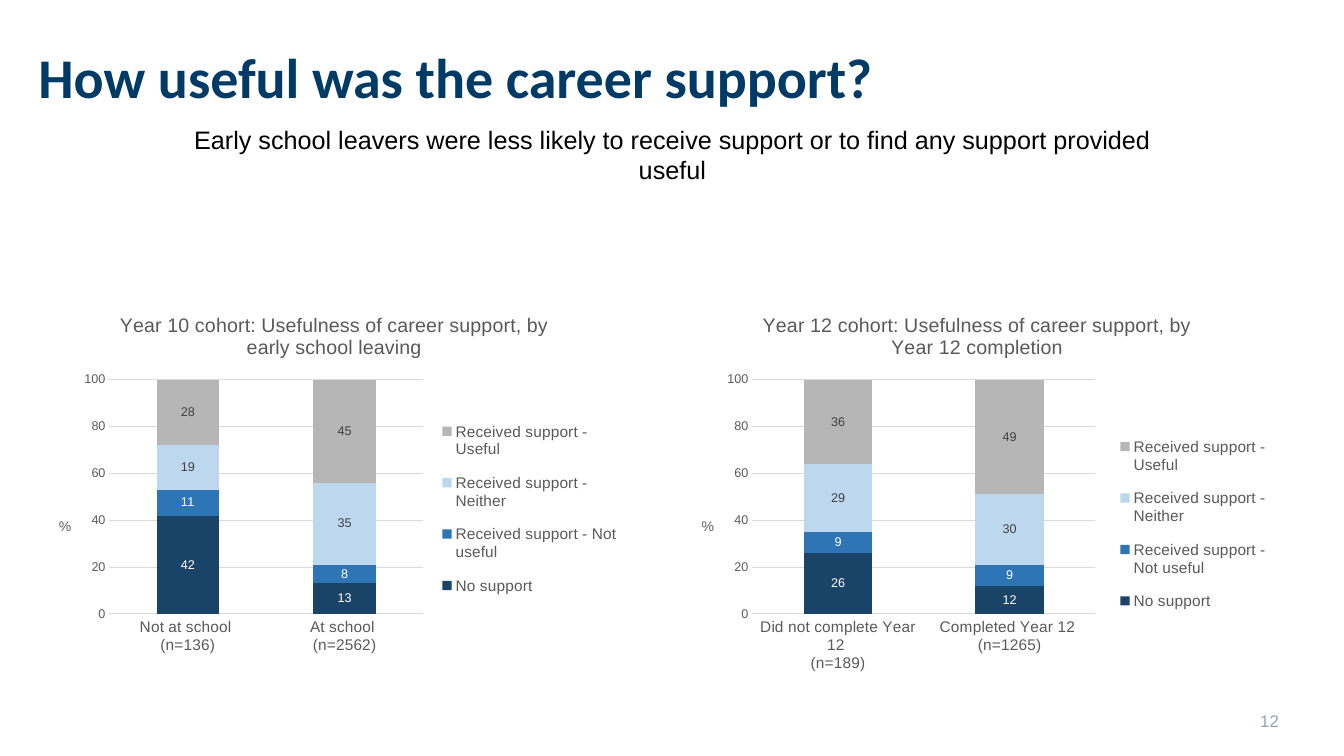
import dataclasses

import lxml.etree
import pptx
import pptx.chart.data
import pptx.dml.color
import pptx.enum.chart
import pptx.enum.text
import pptx.oxml.ns
import pptx.util

Cm = pptx.util.Cm
Align = pptx.enum.text.PP_ALIGN
Anchor = pptx.enum.text.MSO_ANCHOR


@dataclasses.dataclass(frozen=True)
class Theme:
    """Colours, fonts and type sizes of the slide."""
    heading_font: str = "Calibri"
    body_font: str = "Arial"
    navy: str = "003A66"
    black: str = "000000"
    grey: str = "595959"
    page_number: str = "8FA4BA"
    grid: str = "D9D9D9"
    light_label: str = "FFFFFF"
    dark_label: str = "404040"
    support: tuple = ("1A4368", "2E75B6", "BDD7EE", "B6B6B6")
    heading_size: int = 40
    subtitle_size: int = 18
    chart_title_size: int = 14
    page_size: int = 12
    legend_size: int = 11
    chart_size: int = 10
    label_size: int = 9


THEME = Theme()
LEVELS = ("No support", "Received support - Not useful",
          "Received support - Neither", "Received support - Useful")


def format_font(font, size, color=THEME.grey, name=THEME.body_font, bold=False):
    """Set the size, colour, face and weight of a font."""
    font.size = pptx.util.Pt(size)
    font.name = name
    font.bold = bold
    font.color.rgb = pptx.dml.color.RGBColor.from_string(color)


def write_text(frame, text, align=None, **font_format):
    """Write one formatted paragraph into a text frame."""
    paragraph = frame.paragraphs[0]
    paragraph.alignment = align
    run = paragraph.add_run()
    run.text = text
    format_font(run.font, **font_format)


def place(element, index, inner=False, **fractions):
    """Give a chart part a manual layout in fractions of the chart."""
    for old in element.findall(pptx.oxml.ns.qn("c:layout")):
        element.remove(old)
    layout = lxml.etree.Element(pptx.oxml.ns.qn("c:layout"))
    manual = lxml.etree.SubElement(layout, pptx.oxml.ns.qn("c:manualLayout"))
    settings = {"layoutTarget": "inner"} if inner else {}
    settings.update(xMode="edge", yMode="edge", **fractions)
    for tag, value in settings.items():
        lxml.etree.SubElement(manual, pptx.oxml.ns.qn(f"c:{tag}")).set("val", str(value))
    element.insert(index, layout)


class SlideBuilder:
    """Adds styled elements to the current slide."""

    def __init__(self, slide, theme):
        self.slide = slide
        self.theme = theme

    def text(self, box, text, inset=0, anchor=Anchor.TOP, **text_format):
        """Add a wrapped text box."""
        frame = self.slide.shapes.add_textbox(*map(Cm, box)).text_frame
        frame.word_wrap = True
        frame.vertical_anchor = anchor
        frame.margin_left = frame.margin_right = Cm(inset)
        frame.margin_top = frame.margin_bottom = Cm(inset / 2)
        write_text(frame, text, **text_format)

    def line(self, line):
        """Style a chart line as a thin grid line."""
        line.color.rgb = pptx.dml.color.RGBColor.from_string(self.theme.grid)
        line.width = pptx.util.Pt(0.75)

    def chart(self, left, title, categories, values, plot_width, legend):
        """Add a stacked column chart of career support."""
        theme = self.theme
        data = pptx.chart.data.CategoryChartData(number_format="0")
        data.categories = categories
        for level, shares in zip(LEVELS, values):
            data.add_series(level, shares)
        chart = self.slide.shapes.add_chart(
            pptx.enum.chart.XL_CHART_TYPE.COLUMN_STACKED,
            Cm(left), Cm(7.44), Cm(14.91), Cm(9.68), data).chart
        format_font(chart.font, theme.chart_size, theme.black)
        chart.has_title = True
        write_text(chart.chart_title.text_frame, title, size=theme.chart_title_size)
        chart.chart_title.include_in_layout = False
        self.columns(chart.plots[0])
        self.axes(chart)
        chart.has_legend = True
        chart.legend.position = pptx.enum.chart.XL_LEGEND_POSITION.RIGHT
        chart.legend.include_in_layout = False
        format_font(chart.legend.font, theme.legend_size)
        place(chart.element.xpath("c:chart/c:plotArea")[0], 0, inner=True,
              x=0.12, y=0.22, w=plot_width, h=0.61)
        place(chart.element.xpath("c:chart/c:legend")[0], 1, **legend)

    def columns(self, plot):
        """Colour and label the stacked columns."""
        theme = self.theme
        plot.gap_width = 150
        plot.overlap = 100
        plot.vary_by_categories = False
        label_colors = [theme.light_label] * 2 + [theme.dark_label] * 2
        for series, color, label_color in zip(plot.series, theme.support, label_colors):
            series.format.fill.solid()
            series.format.fill.fore_color.rgb = pptx.dml.color.RGBColor.from_string(color)
            labels = series.data_labels
            labels.show_value = True
            labels.number_format = "0"
            labels.number_format_is_linked = False
            format_font(labels.font, theme.label_size, label_color)

    def axes(self, chart):
        """Style both axes and set the upright percent title."""
        theme = self.theme
        category, value = chart.category_axis, chart.value_axis
        for axis, size in ((category, theme.legend_size), (value, theme.label_size)):
            axis.major_tick_mark = pptx.enum.chart.XL_TICK_MARK.NONE
            axis.minor_tick_mark = pptx.enum.chart.XL_TICK_MARK.NONE
            format_font(axis.tick_labels.font, size)
        self.line(category.format.line)
        value.format.line.fill.background()
        value.minimum_scale, value.maximum_scale, value.major_unit = 0, 100, 20
        value.tick_labels.number_format = "0"
        value.tick_labels.number_format_is_linked = False
        value.has_major_gridlines = True
        self.line(value.major_gridlines.format.line)
        write_text(value.axis_title.text_frame, "%", size=theme.chart_size)
        title = chart.element.xpath("c:chart/c:plotArea/c:valAx/c:title")[0]
        body = title.xpath("c:tx/c:rich/a:bodyPr")[0]
        body.set("rot", "0")
        body.set("vert", "horz")
        place(title, 1, x=0.03, y=0.57)


def main():
    """Build and save the career support slide."""
    presentation = pptx.Presentation()
    presentation.slide_width, presentation.slide_height = Cm(33.87), Cm(19.05)
    slide = presentation.slides.add_slide(presentation.slide_layouts[6])
    builder = SlideBuilder(slide, THEME)
    builder.text((24.61, 17.65, 7.62, 1.02), "12", anchor=Anchor.MIDDLE,
                 align=Align.RIGHT, size=THEME.page_size, color=THEME.page_number)
    builder.text((0.97, 1.07, 29.21, 2.97), "How useful was the career support?",
                 size=THEME.heading_size, color=THEME.navy,
                 name=THEME.heading_font, bold=True)
    builder.text((4.6, 3, 24.69, 1.8),
                 "Early school leavers were less likely to receive support "
                 "or to find any support provided useful",
                 inset=0.25, align=Align.CENTER,
                 size=THEME.subtitle_size, color=THEME.black)
    builder.chart(17.17, "Year 12 cohort: Usefulness of career support, by Year 12 completion",
                  ("Did not complete Year 12 \n(n=189)", "Completed Year 12 \n(n=1265)"),
                  ((26, 12), (9, 9), (29, 30), (36, 49)),
                  0.58, {"x": 0.73, "y": 0.33, "w": 0.27, "h": 0.53})
    builder.chart(0.97, "Year 10 cohort: Usefulness of career support, by early school leaving",
                  ("Not at school \n(n=136)", "At school \n(n=2562)"),
                  ((42, 13), (11, 8), (19, 35), (28, 45)),
                  0.53, {"x": 0.67, "y": 0.29, "w": 0.32, "h": 0.53})
    presentation.save("out.pptx")


if __name__ == "__main__":
    main()
